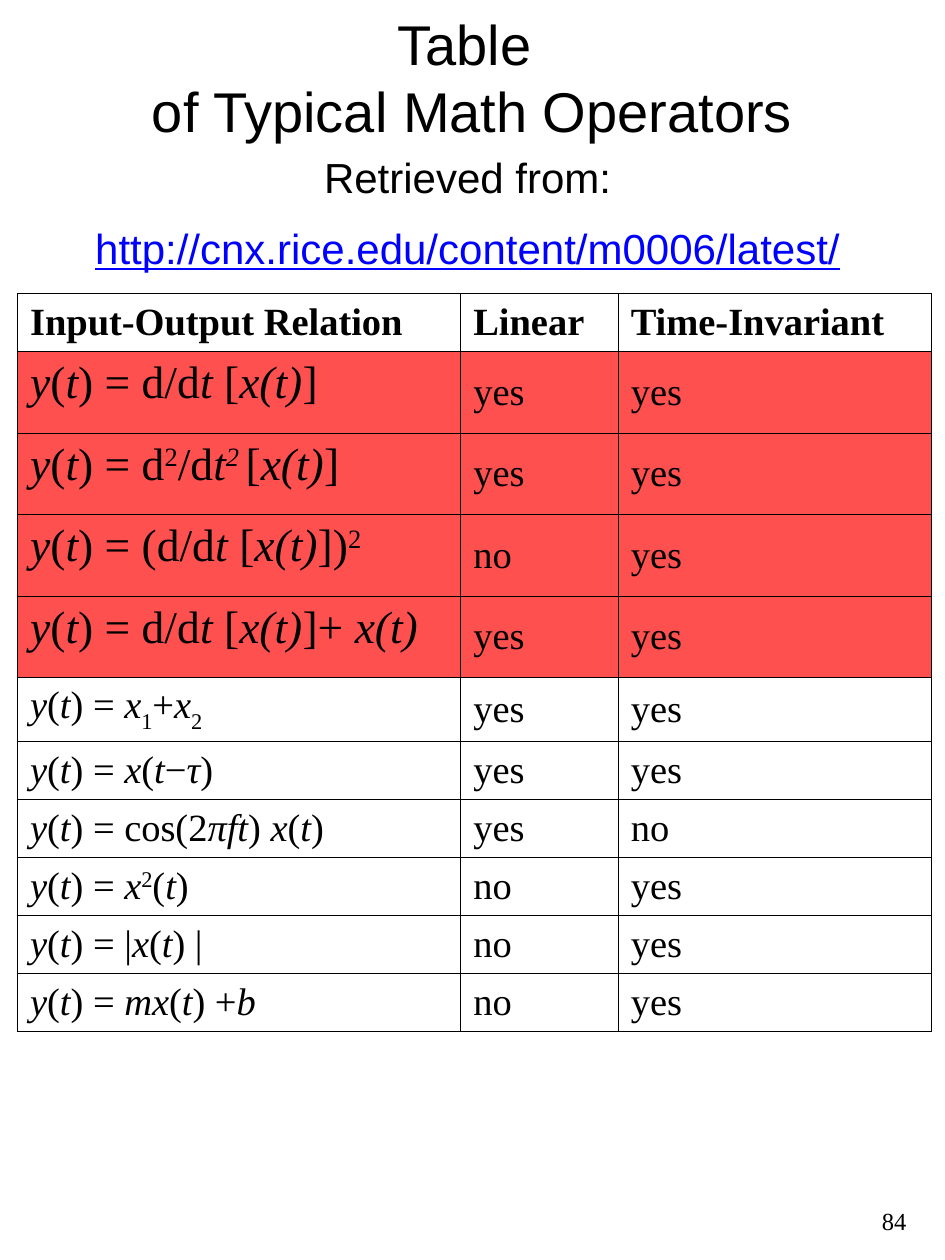
"""Build a slide with a table of typical math operators and their properties."""
from lxml import etree
from pptx import Presentation
from pptx import util as u
from pptx.dml.color import RGBColor
from pptx.enum import text
from pptx.oxml import ns

BLACK = RGBColor(0x00, 0x00, 0x00)
BLUE = RGBColor(0x00, 0x00, 0xFF)
RED = RGBColor(0xFF, 0x50, 0x50)
SANS, SERIF = "Arial", "Times New Roman"
LEFT, CENTER, RIGHT = text.PP_ALIGN.LEFT, text.PP_ALIGN.CENTER, text.PP_ALIGN.RIGHT
TOP, MIDDLE = text.MSO_ANCHOR.TOP, text.MSO_ANCHOR.MIDDLE

TITLE = ("Table ", "of Typical Math Operators")
SOURCE_LABEL = "Retrieved from:"
SOURCE_ADDRESS = "http://cnx.rice.edu/content/m0006/latest/"
PAGE_NUMBER = "84"

HEADINGS = ("Input-Output Relation", "Linear", "Time-Invariant")
DERIVATIVES = [
    ("*y*(*t*) = d/d*t *[*x(t)*]", "yes", "yes"),
    ("*y*(*t*) = d^2^/d*t^2 ^*[*x(t)*]", "yes", "yes"),
    ("*y*(*t*) = (d/d*t *[*x(t)*])^2^", "no", "yes"),
    ("*y*(*t*) = d/d*t *[*x(t)*]+ *x(t)*", "yes", "yes"),
]
OTHERS = [
    ("*y*(*t*) = *x*_1_+*x*_2_", "yes", "yes"),
    ("*y*(*t*) = *x*(*t*−*τ*)", "yes", "yes"),
    ("*y*(*t*) = cos(2*πft*) *x*(*t*)", "yes", "no"),
    ("*y*(*t*) = *x*^2^(*t*)", "no", "yes"),
    ("*y*(*t*) = |*x*(*t*) |", "no", "yes"),
    ("*y*(*t*) = *mx*(*t*) +*b*", "no", "yes"),
]
COLUMN_WIDTHS = (253.3, 90, 179.2)
ROW_HEIGHT, TALL_ROW_HEIGHT = 33.25, 46.6
TABLE_LEFT, TABLE_TOP = 10, 167.8


def add_span(para, content, size, font=SERIF, color=BLACK, bold=False,
             italic=False, underline=False, baseline=0):
    span = para.add_run()
    span.text = content
    span.font.size = u.Pt(size)
    span.font.name = font
    span.font.bold = bold
    span.font.italic = italic
    span.font.underline = underline
    span.font.color.rgb = color
    if baseline:
        span.font._element.set("baseline", str(baseline))


def add_formula(para, formula, size, bold=False):
    """Write a formula: * toggles italic, ^ superscript and _ subscript."""
    shifts = {"^": 30000, "_": -30000}
    italic, baseline, content = False, 0, ""
    for mark in formula + "*":
        if mark != "*" and mark not in shifts:
            content += mark
            continue
        if content:
            add_span(para, content, size, bold=bold, italic=italic, baseline=baseline)
        content = ""
        if mark == "*":
            italic = not italic
        else:
            baseline = 0 if baseline else shifts[mark]


def add_box(page, left, top, width, height, align, anchor=TOP):
    frame = page.shapes.add_textbox(*map(u.Pt, (left, top, width, height))).text_frame
    frame.word_wrap = True
    frame.vertical_anchor = anchor
    para = frame.paragraphs[0]
    para.alignment = align
    return frame, para


def add_borders(cell):
    properties = cell._tc.get_or_add_tcPr()
    for side in ("lnL", "lnR", "lnT", "lnB"):
        line = etree.SubElement(properties, ns.qn(f"a:{side}"), w=str(u.Pt(0.75)))
        fill = etree.SubElement(line, ns.qn("a:solidFill"))
        etree.SubElement(fill, ns.qn("a:srgbClr"), val=str(BLACK))


def add_operator_table(page):
    rows = [HEADINGS, *DERIVATIVES, *OTHERS]
    heights = [TALL_ROW_HEIGHT if row in DERIVATIVES else ROW_HEIGHT for row in rows]
    table = page.shapes.add_table(
        len(rows), len(HEADINGS), u.Pt(TABLE_LEFT), u.Pt(TABLE_TOP),
        u.Pt(sum(COLUMN_WIDTHS)), u.Pt(sum(heights))).table
    table.first_row = False
    table.horz_banding = False
    for column, width in zip(table.columns, COLUMN_WIDTHS):
        column.width = u.Pt(width)
    for r, (row, height) in enumerate(zip(rows, heights)):
        table.rows[r].height = u.Pt(height)
        derivative = row in DERIVATIVES
        for c, content in enumerate(row):
            cell = table.cell(r, c)
            large = derivative and c == 0
            cell.vertical_anchor = TOP if large else MIDDLE
            add_borders(cell)
            if derivative:
                cell.fill.solid()
                cell.fill.fore_color.rgb = RED
            else:
                cell.fill.background()
            para = cell.text_frame.paragraphs[0]
            para.alignment = LEFT
            add_formula(para, content, 26 if large else 22, bold=r == 0)


def main():
    deck = Presentation()
    deck.slide_width, deck.slide_height = u.Pt(540), u.Pt(720)
    page = deck.slides.add_slide(deck.slide_layouts[6])

    add_operator_table(page)

    _, para = add_box(page, 40, 3.6, 460, 80, CENTER, MIDDLE)
    add_span(para, TITLE[0], 32, SANS)
    para.add_line_break()
    add_span(para, TITLE[1], 32, SANS)

    frame, para = add_box(page, 43.2, 82.8, 448, 78, CENTER)
    para.space_after = u.Pt(6)
    add_span(para, SOURCE_LABEL, 24, SANS)
    para = frame.add_paragraph()
    para.alignment = CENTER
    para.space_before = u.Pt(6)
    add_span(para, SOURCE_ADDRESS, 24, SANS, BLUE, underline=True)

    _, para = add_box(page, 399, 685.5, 126, 34, RIGHT)
    add_span(para, PAGE_NUMBER, 14)

    deck.save("out.pptx")


if __name__ == "__main__":
    main()
